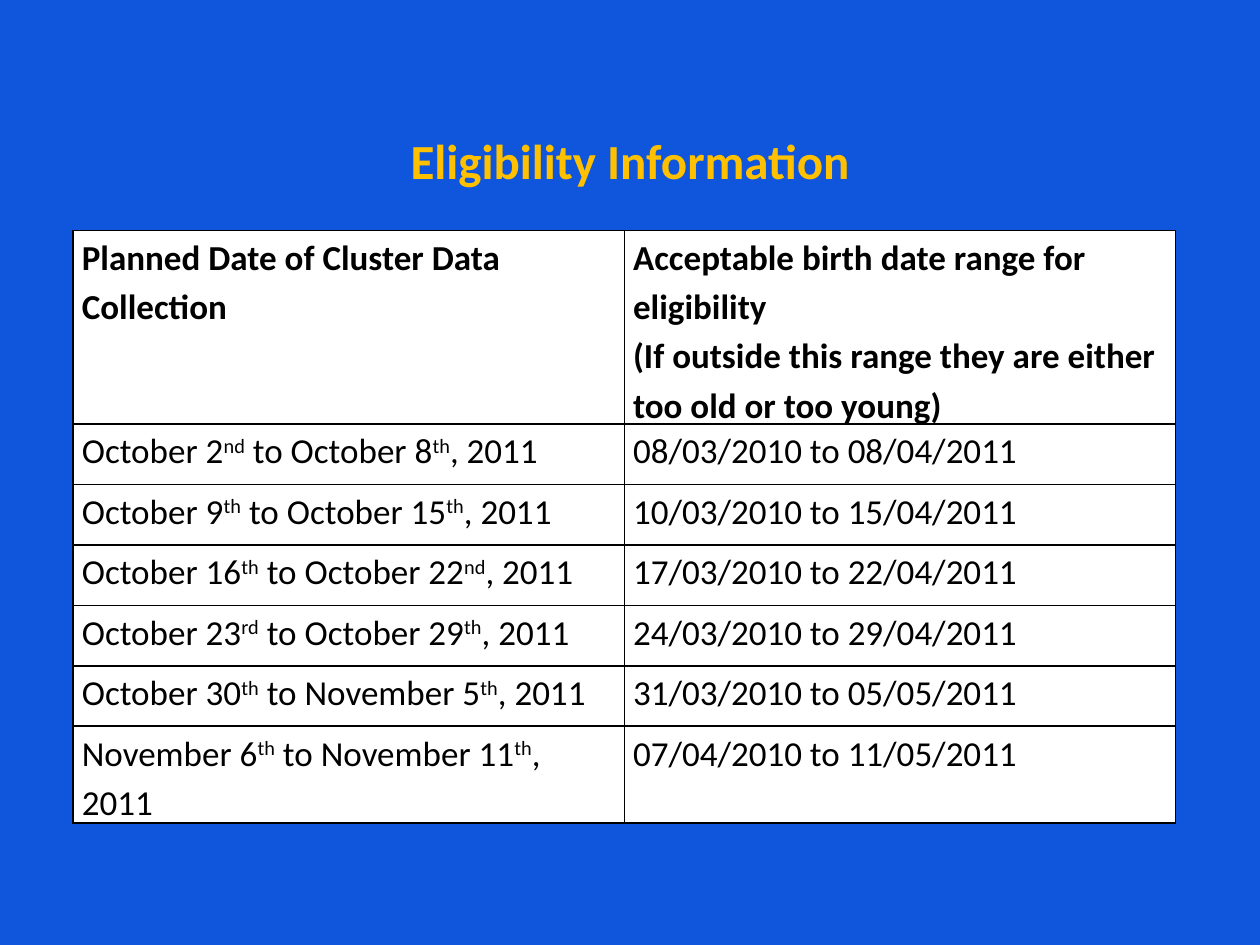
"""Build the eligibility information slide with its date table."""
from dataclasses import dataclass

from lxml import etree
from pptx import Presentation
from pptx.dml.color import RGBColor
from pptx.enum.text import MSO_ANCHOR, PP_ALIGN
from pptx.oxml.ns import qn
from pptx.slide import Slide
from pptx.util import Inches, Pt

BOTTOM = MSO_ANCHOR.BOTTOM
CENTER = PP_ALIGN.CENTER
LEFT = PP_ALIGN.LEFT

BLUE = RGBColor(0x0F, 0x56, 0xDC)
GOLD = RGBColor(0xFF, 0xC0, 0x00)
BLACK = RGBColor(0x00, 0x00, 0x00)
WHITE = RGBColor(0xFF, 0xFF, 0xFF)

WIDTH, HEIGHT = Inches(10), Inches(7.5)
BLANK_LAYOUT = 6

HEADER = (
    "Planned Date of Cluster Data Collection",
    "Acceptable birth date range for eligibility\n"
    "(If outside this range they are either too old or too young)",
)
DATE_RANGES = (
    ("October 2^nd^ to October 8^th^, 2011", "08/03/2010 to 08/04/2011"),
    ("October 9^th^ to October 15^th^, 2011", "10/03/2010 to 15/04/2011"),
    ("October 16^th^ to October 22^nd^, 2011", "17/03/2010 to 22/04/2011"),
    ("October 23^rd^ to October 29^th^, 2011", "24/03/2010 to 29/04/2011"),
    ("October 30^th^ to November 5^th^, 2011", "31/03/2010 to 05/05/2011"),
    ("November 6^th^ to November 11^th^, 2011", "07/04/2010 to 11/05/2011"),
)


@dataclass
class SlideBuilder:
    """Hold the style and the current slide; lengths are shares of the slide."""

    slide: Slide
    font_name: str = "Calibri"
    title_size: int = 28
    body_size: int = 20

    def background(self, color):
        """Fill the slide background."""
        fill = self.slide.background.fill
        fill.solid()
        fill.fore_color.rgb = color

    def set_text(self, paragraph, text, size, color, bold, spacing, align=LEFT):
        """Set text in which carets enclose superscripts."""
        paragraph.alignment = align
        paragraph.line_spacing = spacing
        font = paragraph.font
        font.name, font.size, font.bold = self.font_name, Pt(size), bold
        font.color.rgb = color
        for index, part in enumerate(text.split("^")):
            run = paragraph.add_run()
            run.text = part
            if index % 2:
                run._r.get_or_add_rPr().set("baseline", "30000")

    def title(self, text, left, top, width, height):
        """Add the centred title."""
        box = self.slide.shapes.add_textbox(
            int(left * WIDTH), int(top * HEIGHT), int(width * WIDTH), int(height * HEIGHT)
        )
        frame = box.text_frame
        frame.word_wrap = True
        frame.vertical_anchor = BOTTOM
        self.set_text(frame.paragraphs[0], text, self.title_size, GOLD, True, Pt(30), CENTER)

    def table(self, rows, left, top, width, header_height, row_height):
        """Add a ruled table with a bold header row."""
        heights = [header_height] + [row_height] * (len(rows) - 1)
        table = self.slide.shapes.add_table(
            len(rows), len(rows[0]), int(left * WIDTH), int(top * HEIGHT),
            int(width * WIDTH), int(sum(heights) * HEIGHT),
        ).table
        table.first_row = table.horz_banding = False
        for row_index, (texts, height) in enumerate(zip(rows, heights)):
            table.rows[row_index].height = int(height * HEIGHT)
            for column_index, text in enumerate(texts):
                self.cell(table.cell(row_index, column_index), text, row_index == 0)

    def cell(self, cell, text, bold):
        """Fill and rule one table cell and set its text."""
        cell.margin_left = cell.margin_right = Inches(0.07)
        cell.margin_top = cell.margin_bottom = 0
        self.borders(cell)
        cell.fill.solid()
        cell.fill.fore_color.rgb = WHITE
        frame = cell.text_frame
        for index, line in enumerate(text.split("\n")):
            paragraph = frame.add_paragraph() if index else frame.paragraphs[0]
            self.set_text(paragraph, line, self.body_size, BLACK, bold, 1.15)

    def borders(self, cell):
        """Rule all four sides of a cell."""
        properties = cell._tc.get_or_add_tcPr()
        for side in ("a:lnL", "a:lnR", "a:lnT", "a:lnB"):
            line = etree.SubElement(properties, qn(side), w=str(Pt(1)))
            fill = etree.SubElement(line, qn("a:solidFill"))
            etree.SubElement(fill, qn("a:srgbClr"), val=str(BLACK))


def main():
    """Build and save the presentation."""
    presentation = Presentation()
    presentation.slide_width, presentation.slide_height = WIDTH, HEIGHT
    layout = presentation.slide_layouts[BLANK_LAYOUT]
    builder = SlideBuilder(presentation.slides.add_slide(layout))
    builder.background(BLUE)
    builder.title("Eligibility Information", 0.05, 0.04, 0.9, 1 / 6)
    builder.table((HEADER,) + DATE_RANGES, 0.058, 0.244, 0.875, 0.11, 0.064)
    presentation.save("out.pptx")


if __name__ == "__main__":
    main()
